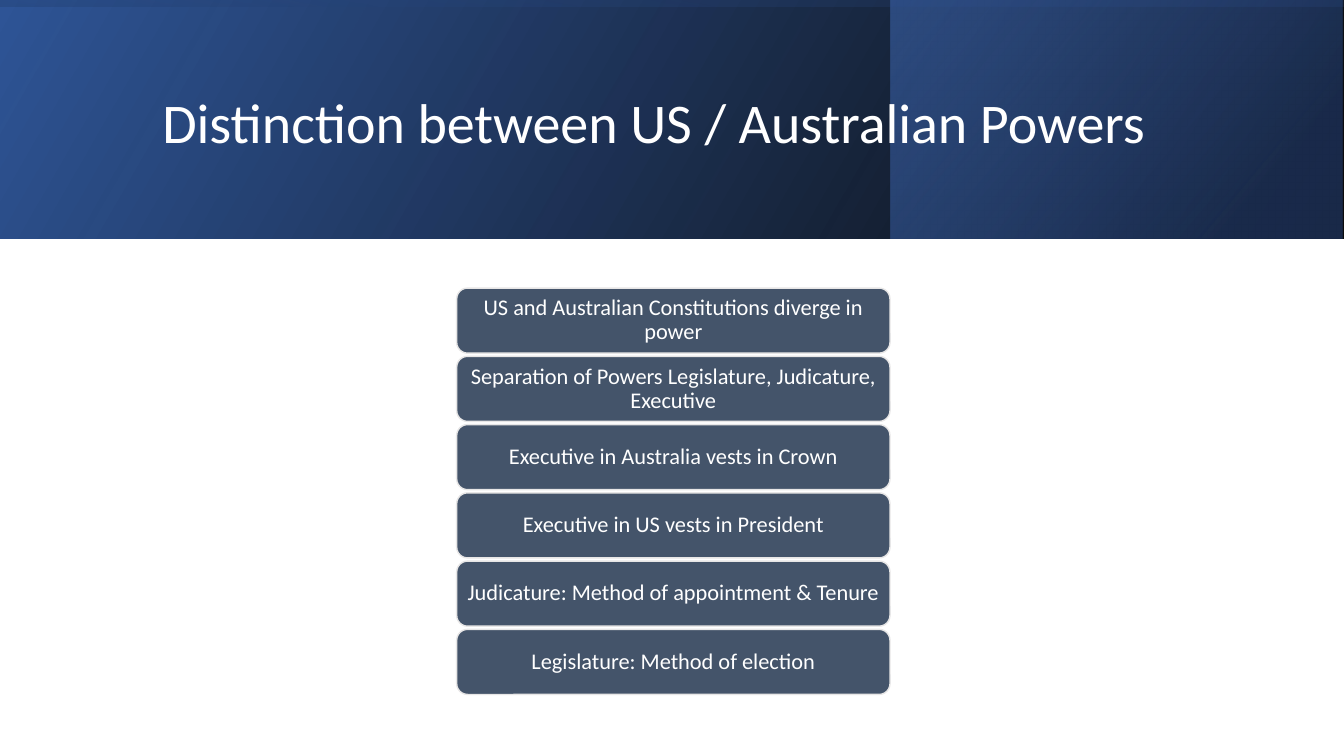
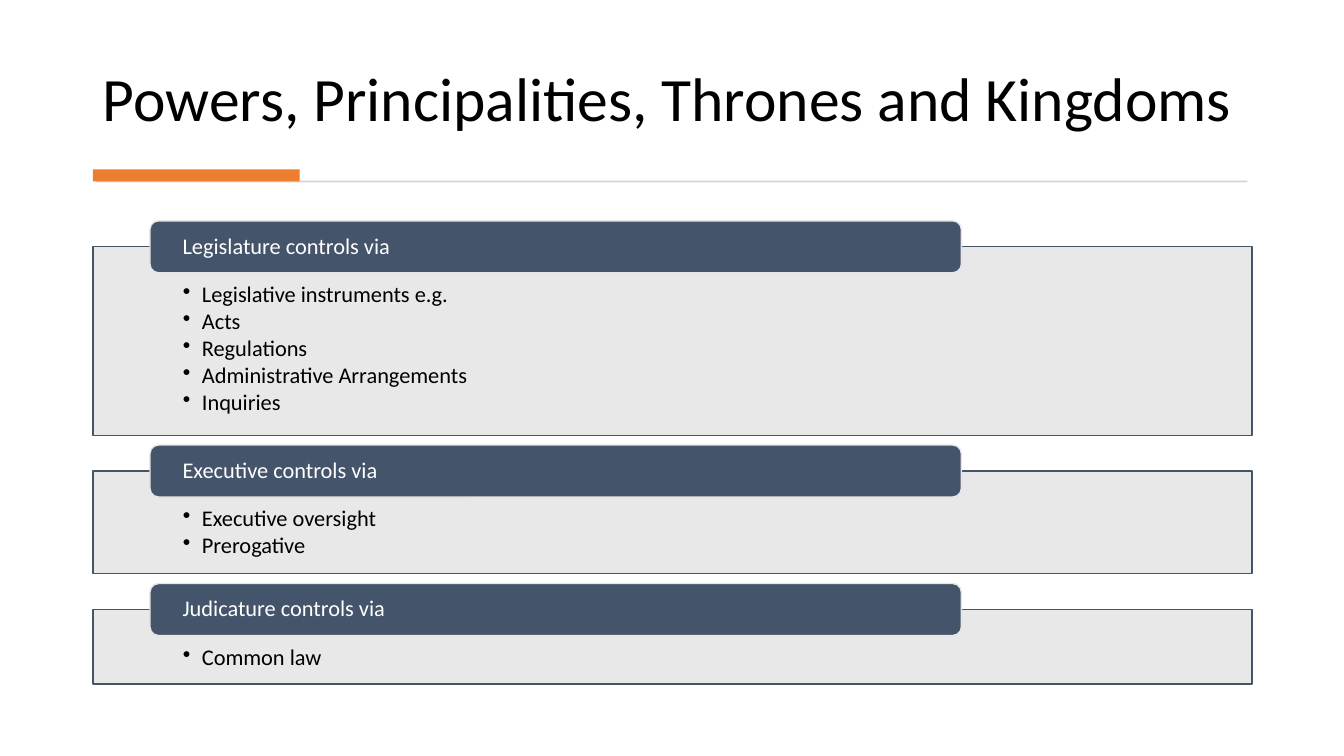
from dataclasses import dataclass

from lxml.etree import SubElement
from pptx import Presentation
from pptx.dml.color import RGBColor
from pptx.enum.shapes import MSO_SHAPE as Preset
from pptx.enum.text import MSO_ANCHOR as Anchor, PP_ALIGN as Align
from pptx.oxml.ns import qn
from pptx.shapes.autoshape import Shape
from pptx.slide import Slide
from pptx.text.text import TextFrame
from pptx.util import Cm, Pt

WHITE = RGBColor(0xFF, 0xFF, 0xFF)
BLACK = RGBColor(0x00, 0x00, 0x00)
SLATE = RGBColor(0x44, 0x54, 0x6A)
PALE_GREY = RGBColor(0xE7, 0xE6, 0xE6)
RULE_GREY = RGBColor(0xD5, 0xD5, 0xD5)
ORANGE = RGBColor(0xED, 0x7D, 0x31)
DEEP_BLUE = RGBColor(0x2F, 0x55, 0x97)
NAVY = RGBColor(0x20, 0x38, 0x64)
BRIGHT_BLUE = RGBColor(0x44, 0x72, 0xC4)

FONT = "Calibri"
BODY_SIZE = 16
SLIDE_WIDTH, SLIDE_HEIGHT = 33.87, 19.05
BAND_HEIGHT = 6.02
BAND_OFFSET = (SLIDE_WIDTH - BAND_HEIGHT) / 2
STEP_TOP, STEP_HEIGHT, STEP_PITCH = 7.26, 1.64, 1.72
PANEL_LEFT, PANEL_TOP, PANEL_WIDTH, PANEL_GAP = 2.34, 6.22, 29.21, 0.9
HEADER_LEFT, HEADER_WIDTH, HEADER_HEIGHT = 3.78, 20.45, 1.31


@dataclass(frozen=True)
class Box:
    left: float
    top: float
    width: float
    height: float


@dataclass(frozen=True)
class Stop:
    position: int
    color: RGBColor
    opacity: int


@dataclass(frozen=True)
class GradientBand:
    box: Box
    angle: int
    stops: tuple[Stop, ...]
    rotation: int = 0


@dataclass(frozen=True)
class Panel:
    heading: str
    items: tuple[str, ...]
    height: float


BANDS = (
    GradientBand(Box(0, 0, SLIDE_WIDTH, BAND_HEIGHT), 330,
                 (Stop(0, BLACK, 96), Stop(100, DEEP_BLUE, 100))),
    GradientBand(Box(22.45, 0, 11.39, BAND_HEIGHT), 320,
                 (Stop(19, NAVY, 68), Stop(100, BRIGHT_BLUE, 48))),
    GradientBand(Box(BAND_OFFSET, -BAND_OFFSET, BAND_HEIGHT, SLIDE_WIDTH), 350,
                 (Stop(23, DEEP_BLUE, 16), Stop(99, BLACK, 45)), 270),
)
STEPS = (
    "US and Australian Constitutions diverge in power",
    "Separation of Powers Legislature, Judicature, Executive",
    "Executive in Australia vests in Crown",
    "Executive in US vests in President",
    "Judicature: Method of appointment & Tenure",
    "Legislature: Method of election",
)
PANELS = (
    Panel("Legislature controls via",
          ("Legislative instruments e.g.", "Acts", "Regulations",
           "Administrative Arrangements", "Inquiries"), 4.75),
    Panel("Executive controls via", ("Executive oversight", "Prerogative"), 2.59),
    Panel("Judicature controls via", ("Common law",), 1.88),
)


def add_block(slide: Slide, box: Box, preset: Preset, fill: RGBColor,
              line: RGBColor | None = None) -> Shape:
    shape = slide.shapes.add_shape(
        preset, Cm(box.left), Cm(box.top), Cm(box.width), Cm(box.height))
    shape.shadow.inherit = False
    shape.fill.solid()
    shape.fill.fore_color.rgb = fill
    if line is None:
        shape.line.fill.background()
    else:
        shape.line.color.rgb = line
        shape.line.width = Pt(1)
    return shape


def set_opacity(color_element, percent: int) -> None:
    SubElement(color_element, qn("a:alpha"), val=str(percent * 1000))


def add_gradient_band(slide: Slide, band: GradientBand) -> None:
    shape = add_block(slide, band.box, Preset.RECTANGLE, DEEP_BLUE)
    shape.rotation = band.rotation
    properties = shape.element.spPr
    properties.find(qn("a:xfrm")).set("flipH", "1")
    solid = properties.find(qn("a:solidFill"))
    gradient = SubElement(properties, qn("a:gradFill"), rotWithShape="1")
    stop_list = SubElement(gradient, qn("a:gsLst"))
    for stop in band.stops:
        entry = SubElement(stop_list, qn("a:gs"), pos=str(stop.position * 1000))
        color = SubElement(entry, qn("a:srgbClr"), val=str(stop.color))
        set_opacity(color, stop.opacity)
    SubElement(gradient, qn("a:lin"), ang=str(band.angle * 60000), scaled="0")
    properties.replace(solid, gradient)


def write_text(frame: TextFrame, lines: tuple[str, ...], size: int, color: RGBColor,
               align: Align = Align.LEFT, anchor: Anchor = Anchor.MIDDLE,
               bullets: bool = False) -> None:
    frame.word_wrap = True
    frame.vertical_anchor = anchor
    for index, line in enumerate(lines):
        paragraph = frame.add_paragraph() if index else frame.paragraphs[0]
        paragraph.text = line
        paragraph.alignment = align
        paragraph.line_spacing = 0.9
        if bullets:
            paragraph.space_after = Pt(2)
            properties = paragraph._p.get_or_add_pPr()
            properties.set("marL", str(Cm(0.48)))
            properties.set("indent", str(-Cm(0.48)))
            SubElement(properties, qn("a:buChar"), char="•")
        paragraph.font.name = FONT
        paragraph.font.size = Pt(size)
        paragraph.font.color.rgb = color


def set_margins(frame: TextFrame, side: float, top: float, bottom: float) -> None:
    frame.margin_left = frame.margin_right = Cm(side)
    frame.margin_top, frame.margin_bottom = Cm(top), Cm(bottom)


def add_title(slide: Slide, text: str, box: Box, size: int, color: RGBColor,
              anchor: Anchor) -> None:
    title = slide.shapes.add_textbox(
        Cm(box.left), Cm(box.top), Cm(box.width), Cm(box.height))
    write_text(title.text_frame, (text,), size, color, anchor=anchor)


def add_label(slide: Slide, text: str, box: Box, align: Align, side: float,
              edge: float) -> None:
    label = add_block(slide, box, Preset.ROUNDED_RECTANGLE, SLATE, PALE_GREY)
    set_margins(label.text_frame, side, edge, edge)
    write_text(label.text_frame, (text,), BODY_SIZE, WHITE, align)


def add_panel(slide: Slide, panel: Panel, top: float) -> None:
    body = add_block(slide, Box(PANEL_LEFT, top, PANEL_WIDTH, panel.height),
                     Preset.RECTANGLE, PALE_GREY, SLATE)
    set_opacity(body.element.spPr.find(qn("a:solidFill"))[0], 90)
    set_margins(body.text_frame, 2.27, 0.92, 0.3)
    write_text(body.text_frame, panel.items, BODY_SIZE, BLACK,
               anchor=Anchor.TOP, bullets=True)
    header = Box(HEADER_LEFT, top - HEADER_HEIGHT / 2, HEADER_WIDTH, HEADER_HEIGHT)
    add_label(slide, panel.heading, header, Align.LEFT, 0.76, 0)


def build_distinction(slide: Slide) -> None:
    for band in BANDS:
        add_gradient_band(slide, band)
    add_title(slide, "Distinction between US / Australian Powers",
              Box(3.84, 0.97, 27, 4.37), 40, WHITE, Anchor.MIDDLE)
    for index, step in enumerate(STEPS):
        box = Box(11.51, STEP_TOP + index * STEP_PITCH, 10.92, STEP_HEIGHT)
        add_label(slide, step, box, Align.CENTER, 0.17, 0.08)


def build_powers(slide: Slide) -> None:
    add_title(slide, "Powers, Principalities, Thrones and Kingdoms",
              Box(PANEL_LEFT, 0.71, 29.18, 2.82), 44, BLACK, Anchor.BOTTOM)
    add_block(slide, Box(2.41, 4.55, 29.03, 0.05), Preset.RECTANGLE, RULE_GREY)
    add_block(slide, Box(PANEL_LEFT, 4.27, 5.21, 0.3), Preset.RECTANGLE, ORANGE)
    top = PANEL_TOP
    for panel in PANELS:
        add_panel(slide, panel, top)
        top += panel.height + PANEL_GAP


def main() -> None:
    presentation = Presentation()
    presentation.slide_width = Cm(SLIDE_WIDTH)
    presentation.slide_height = Cm(SLIDE_HEIGHT)
    blank = presentation.slide_layouts[6]
    for build in (build_distinction, build_powers):
        build(presentation.slides.add_slide(blank))
    presentation.save("out.pptx")


if __name__ == "__main__":
    main()
